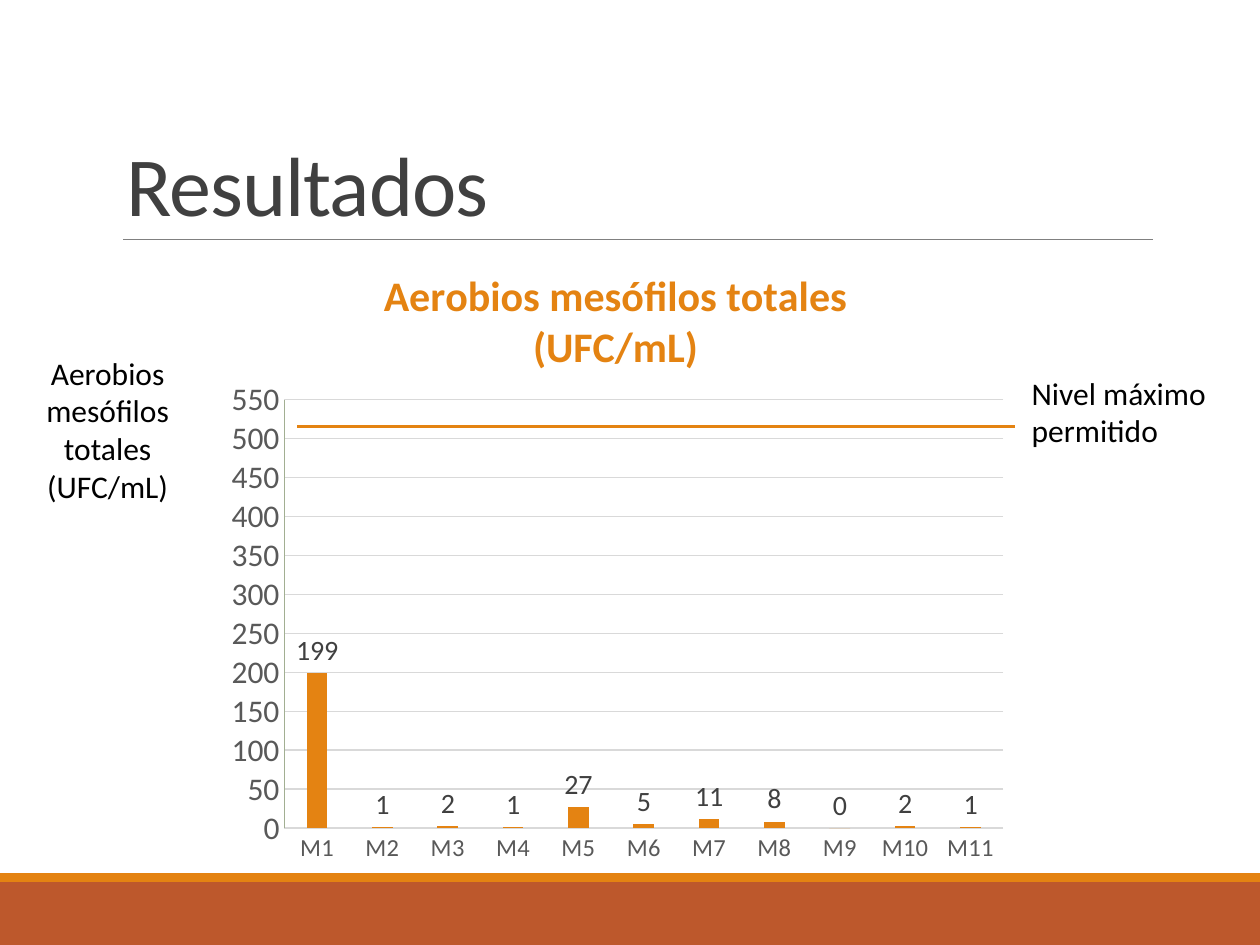
from dataclasses import dataclass

import pptx
import pptx.chart.data
import pptx.dml.color
import pptx.enum.chart
import pptx.enum.shapes
import pptx.enum.text
import pptx.oxml
import pptx.oxml.ns
import pptx.util

Pt = pptx.util.Pt
FONT = "Calibri"
TOPIC = "Aerobios mesófilos totales (UFC/mL)"
COLORS = {
    "rust": "BD582C", "orange": "E48312", "rule": "808080", "title": "404040",
    "text": "000000", "axis": "595959", "grid": "D9D9D9", "sage": "A2AF92",
}
COUNTS = [199, 1, 2, 1, 27, 5, 11, 8, 0, 2, 1]


@dataclass
class Band:
    top: float
    height: float
    color: str


@dataclass
class Rule:
    left: float
    right: float
    y: float
    color: str
    width: float


@dataclass
class Label:
    text: str
    box: tuple[float, float, float, float]
    size: float = 18
    color: str = "text"
    align: str = "LEFT"
    anchor: str = "TOP"
    leading: float = 1.0
    spacing: int = 0  # hundredths of a point between letters


BANDS = [Band(504, 36, "rust"), Band(499, 5, "orange")]
RULES = [Rule(70.5, 659, 137, "rule", 0.5), Rule(170, 580, 243.5, "orange", 1.75)]
LABELS = [
    Label("Resultados", (65, 22.5, 594, 114.5), 48, "title",
          anchor="BOTTOM", leading=0.85, spacing=-50),
    Label("Nivel máximo permitido", (582.5, 210, 127, 51)),
    Label(TOPIC, (8.5, 198.5, 106, 94.5), align="CENTER"),
]


def tint(name: str) -> pptx.dml.color.RGBColor:
    return pptx.dml.color.RGBColor.from_string(COLORS[name])


def style_font(font, size: float, color: str, bold: bool = False) -> None:
    font.name = FONT
    font.size = Pt(size)
    font.bold = bold
    font.color.rgb = tint(color)


def style_line(line, color: str, width: float) -> None:
    line.color.rgb = tint(color)
    line.width = Pt(width)


def draw_band(slide, band: Band) -> None:
    shape = slide.shapes.add_shape(
        pptx.enum.shapes.MSO_SHAPE.RECTANGLE, 0, Pt(band.top), Pt(720), Pt(band.height))
    shape.shadow.inherit = False
    shape.fill.solid()
    shape.fill.fore_color.rgb = tint(band.color)
    shape.line.fill.background()


def draw_rule(slide, rule: Rule) -> None:
    line = slide.shapes.add_connector(
        pptx.enum.shapes.MSO_CONNECTOR.STRAIGHT,
        Pt(rule.left), Pt(rule.y), Pt(rule.right), Pt(rule.y))
    style_line(line.line, rule.color, rule.width)
    line._element.spPr.append(pptx.oxml.parse_xml(
        f"<a:effectLst {pptx.oxml.ns.nsdecls('a')}/>"))


def draw_label(slide, label: Label) -> None:
    box = slide.shapes.add_textbox(*map(Pt, label.box))
    frame = box.text_frame
    frame.word_wrap = True
    frame.vertical_anchor = pptx.enum.text.MSO_ANCHOR[label.anchor]
    para = frame.paragraphs[0]
    para.alignment = pptx.enum.text.PP_ALIGN[label.align]
    para.line_spacing = label.leading
    run = para.add_run()
    run.text = label.text
    if label.spacing:
        run._r.get_or_add_rPr().set("spc", str(label.spacing))
    style_font(para.font, label.size, label.color)


def place_plot(chart, x: float, y: float, w: float, h: float) -> None:
    """Fix the inner plot area, in fractions of the chart."""
    area = chart._chartSpace.chart.plotArea
    for old in area.findall(pptx.oxml.ns.qn("c:layout")):
        area.remove(old)
    sizes = "".join(f'<c:{key} val="{val}"/>' for key, val in zip("xywh", (x, y, w, h)))
    area.insert(0, pptx.oxml.parse_xml(
        f"<c:layout {pptx.oxml.ns.nsdecls('c')}><c:manualLayout>"
        '<c:layoutTarget val="inner"/><c:xMode val="edge"/><c:yMode val="edge"/>'
        f"{sizes}</c:manualLayout></c:layout>"))


def style_axis(axis, size: float, color: str) -> None:
    axis.major_tick_mark = pptx.enum.chart.XL_TICK_MARK.NONE
    axis.minor_tick_mark = pptx.enum.chart.XL_TICK_MARK.NONE
    style_font(axis.tick_labels.font, size, "axis")
    style_line(axis.format.line, color, 0.75)


def draw_chart(slide) -> None:
    data = pptx.chart.data.CategoryChartData()
    data.categories = [f"M{i}" for i in range(1, len(COUNTS) + 1)]
    data.add_series(TOPIC, COUNTS)
    chart = slide.shapes.add_chart(
        pptx.enum.chart.XL_CHART_TYPE.COLUMN_CLUSTERED,
        Pt(121), Pt(137), Pt(461.5), Pt(365.5), data).chart
    style_font(chart.font, 10, "text")
    chart.has_legend = False
    chart.has_title = True
    title = chart.chart_title.text_frame
    title.text = TOPIC
    style_font(title.paragraphs[0].font, 24, "orange", True)
    place_plot(chart, 0.09, 0.25, 0.89, 0.67)

    style_axis(chart.category_axis, 14, "grid")
    axis = chart.value_axis
    style_axis(axis, 18, "sage")
    axis.minimum_scale, axis.maximum_scale, axis.major_unit = 0, 550, 50
    style_line(axis.major_gridlines.format.line, "grid", 0.75)

    plot = chart.plots[0]
    plot.gap_width, plot.overlap = 215, -32
    plot.vary_by_categories = False
    bars = plot.series[0]
    bars.format.fill.solid()
    bars.format.fill.fore_color.rgb = tint("orange")
    marks = bars.data_labels
    marks.show_value = True
    marks.position = pptx.enum.chart.XL_LABEL_POSITION.OUTSIDE_END
    style_font(marks.font, 16, "title")


def main() -> None:
    deck = pptx.Presentation()
    deck.slide_width, deck.slide_height = Pt(720), Pt(540)
    slide = deck.slides.add_slide(deck.slide_layouts[6])
    for band in BANDS:
        draw_band(slide, band)
    draw_chart(slide)
    for rule in RULES:
        draw_rule(slide, rule)
    for label in LABELS:
        draw_label(slide, label)
    deck.save("out.pptx")


if __name__ == "__main__":
    main()
